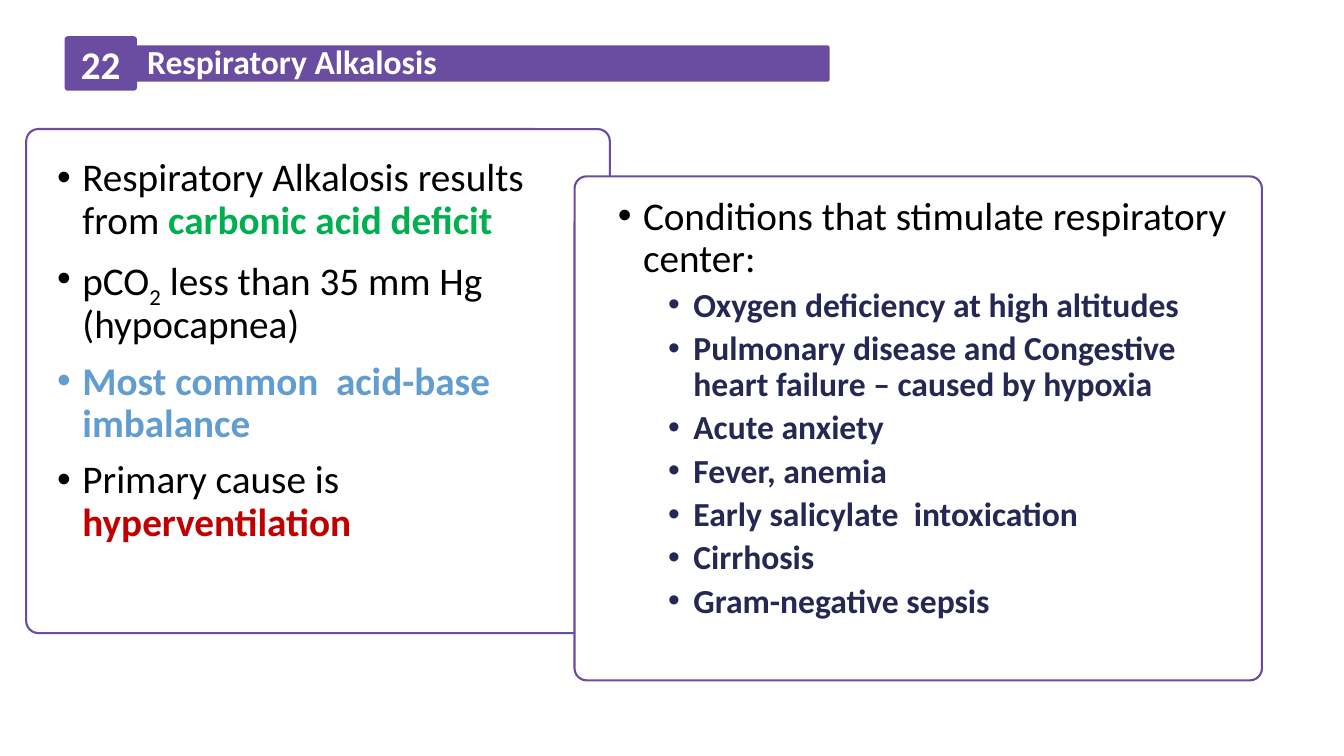
from lxml import etree
from pptx import Presentation
from pptx.dml.color import RGBColor
from pptx.enum.shapes import MSO_SHAPE
from pptx.enum.text import MSO_ANCHOR, MSO_AUTO_SIZE, PP_ALIGN
from pptx.oxml.ns import qn
from pptx.util import Pt

ROUNDED = MSO_SHAPE.ROUNDED_RECTANGLE
TOP, MIDDLE = MSO_ANCHOR.TOP, MSO_ANCHOR.MIDDLE
LEFT, CENTER = PP_ALIGN.LEFT, PP_ALIGN.CENTER
NO_AUTOFIT = MSO_AUTO_SIZE.NONE

PURPLE = RGBColor(0x6A, 0x4C, 0xA1)
WHITE = RGBColor(0xFF, 0xFF, 0xFF)
BLACK = RGBColor(0x00, 0x00, 0x00)
GREEN = RGBColor(0x00, 0xB0, 0x50)
BLUE = RGBColor(0x62, 0x9D, 0xD1)
RED = RGBColor(0xC0, 0x00, 0x00)
NAVY = RGBColor(0x24, 0x28, 0x52)


class SlideBuilder:
    """Holds the style and the current slide; boxes are in points."""
    font_name = "Calibri"
    main_size, sub_size = 28, 24
    indent = 18

    def __init__(self, slide):
        self.slide = slide

    def style(self, font, size, color, bold=False):
        font.name, font.size, font.bold = self.font_name, Pt(size), bold
        font.color.rgb = color

    def rounded(self, box, radius, fill, line=None):
        shape = self.slide.shapes.add_shape(ROUNDED, *map(Pt, box))
        shape.adjustments[0] = radius
        shape.shadow.inherit = False
        shape.fill.solid()
        shape.fill.fore_color.rgb = fill
        if line is None:
            shape.line.fill.background()
        else:
            shape.line.color.rgb = line
            shape.line.width = Pt(1.5)
        return shape

    def card(self, box):
        return self.rounded(box, 0.024, WHITE, PURPLE)

    def number(self, box, text):
        badge = self.rounded(box, 0.06, PURPLE)
        badge.text_frame.vertical_anchor = MIDDLE
        paragraph = badge.text_frame.paragraphs[0]
        paragraph.text = text
        paragraph.alignment = CENTER
        self.style(paragraph.font, self.main_size, WHITE, True)

    def title(self, box, text):
        title = self.slide.shapes.title
        title.left, title.top, title.width, title.height = map(Pt, box)
        # Bring the title in front of its bar
        title.element.getparent().append(title.element)
        frame = title.text_frame
        frame.text = text
        frame.auto_size, frame.vertical_anchor = NO_AUTOFIT, TOP
        paragraph = frame.paragraphs[0]
        paragraph.alignment = LEFT
        paragraph.line_spacing = Pt(15.2)
        paragraph.space_after = Pt(5)
        self.style(paragraph.font, self.sub_size, WHITE, True)

    def bullets(self, box, items):
        """Each item is (level, color, bold, runs); a run is (text, overrides)."""
        frame = self.slide.shapes.add_textbox(*map(Pt, box)).text_frame
        frame.word_wrap = True
        for index, (level, color, bold, runs) in enumerate(items):
            paragraph = frame.add_paragraph() if index else frame.paragraphs[0]
            paragraph.level = level
            paragraph.line_spacing = 0.9
            paragraph.space_before = Pt((5 if level else 10) if index else 0)
            properties = paragraph._p.get_or_add_pPr()
            properties.set("marL", str(Pt(self.indent * (1 + 2 * level))))
            properties.set("indent", str(-Pt(self.indent)))
            etree.SubElement(properties, qn("a:buFont")).set("typeface", "Arial")
            etree.SubElement(properties, qn("a:buChar")).set("char", "•")
            size = self.sub_size if level else self.main_size
            self.style(paragraph.font, size, color, bold)
            for text, accent in runs:
                run = paragraph.add_run()
                run.text = text
                if accent == "subscript":
                    run._r.get_or_add_rPr().set("baseline", "-25000")
                elif accent is not None:
                    run.font.bold = True
                    run.font.color.rgb = accent


def main():
    prs = Presentation()
    prs.slide_width, prs.slide_height = Pt(960), Pt(540)
    builder = SlideBuilder(prs.slides.add_slide(prs.slide_layouts[5]))

    # Left card: definition
    builder.card((18.7, 92.2, 416.9, 360))
    builder.bullets((33.8, 109.4, 385.2, 308.9), [
        (0, BLACK, False, [("Respiratory Alkalosis results from ", None),
                           ("carbonic acid deficit", GREEN)]),
        (0, BLACK, False, [("pCO", None), ("2", "subscript"),
                           (" less than 35 mm Hg (hypocapnea)", None)]),
        (0, BLUE, True, [("Most common  acid-base imbalance", None)]),
        (0, BLACK, False, [("Primary cause is ", None),
                           ("hyperventilation", RED)]),
    ])

    # Heading: bar, slide number, title
    builder.rounded((78.5, 32.4, 514.1, 25.9), 0.06, PURPLE)
    builder.number((46.1, 25.9, 51.8, 38.9), "22")
    builder.title((97.9, 39.5, 429.8, 25.2), "Respiratory Alkalosis")

    # Right card: causes
    conditions = [
        "Oxygen deficiency at high altitudes",
        "Pulmonary disease and Congestive heart failure – caused by hypoxia",
        "Acute anxiety",
        "Fever, anemia",
        "Early salicylate  intoxication",
        "Cirrhosis",
        "Gram-negative sepsis",
    ]
    builder.card((410.4, 126, 491, 360))
    builder.bullets((434.2, 136.8, 452.2, 331.9), [
        (0, BLACK, False,
         [("Conditions that stimulate respiratory center:", None)]),
        *((1, NAVY, True, [(condition, None)]) for condition in conditions),
    ])

    prs.save("out.pptx")


if __name__ == "__main__":
    main()
